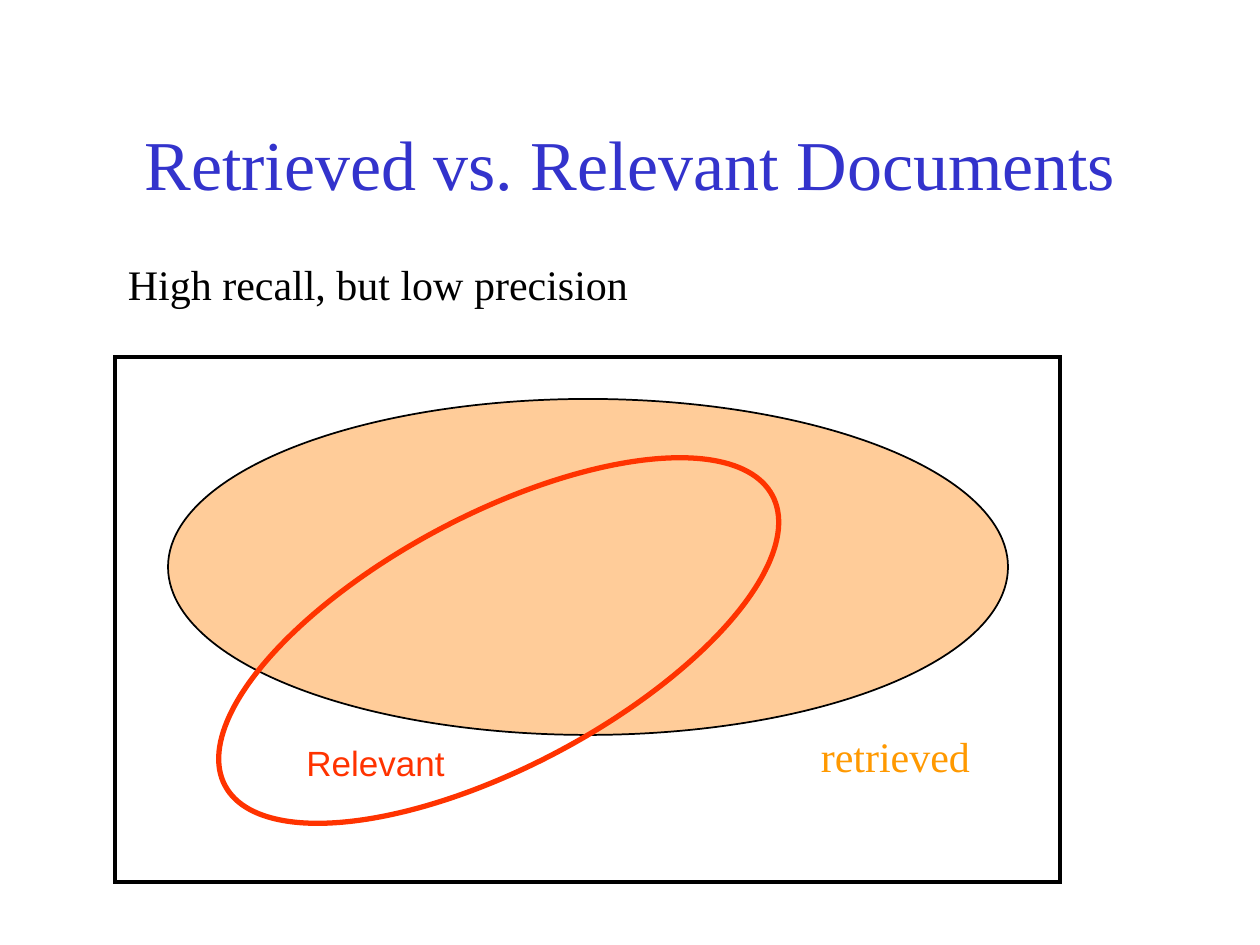
from dataclasses import dataclass

from lxml.etree import SubElement
from pptx import Presentation
from pptx.dml.color import RGBColor
from pptx.enum.shapes import MSO_SHAPE
from pptx.enum.text import MSO_ANCHOR, MSO_AUTO_SIZE, PP_ALIGN
from pptx.oxml.ns import qn
from pptx.util import Pt


@dataclass(frozen=True)
class Theme:
    serif: str = "Times New Roman"
    sans: str = "Arial"
    title: str = "3333CC"
    ink: str = "000000"
    relevant: str = "FF3300"
    retrieved: str = "FF9900"
    retrieved_fill: str = "FFCC99"
    title_size: int = 40
    body_size: int = 24
    label_size: int = 20


theme = Theme()

prs = Presentation()
prs.slide_width, prs.slide_height = Pt(720), Pt(540)
s = prs.slides.add_slide(prs.slide_layouts[6])


def add_text(text, box, size, color, font=theme.serif, wrap=False):
    sp = s.shapes.add_textbox(*map(Pt, box))
    tf = sp.text_frame
    tf.word_wrap = wrap
    tf.auto_size = MSO_AUTO_SIZE.NONE if wrap else MSO_AUTO_SIZE.SHAPE_TO_FIT_TEXT
    p = tf.paragraphs[0]
    r = p.add_run()
    r.text = text
    r.font.name = font
    r.font.size = Pt(size)
    r.font.color.rgb = RGBColor.from_string(color)
    return tf


def add_outline(kind, box, color, weight, fill=None, rotation=0):
    """Add a shape with a sharp-cornered outline, unfilled unless a fill is given."""
    sp = s.shapes.add_shape(kind, *map(Pt, box))
    sp.shadow.inherit = False
    sp.rotation = rotation
    sp.line.color.rgb = RGBColor.from_string(color)
    sp.line.width = Pt(weight)
    SubElement(sp.element.spPr.find(qn("a:ln")), qn("a:miter"), lim="800000")
    if fill:
        sp.fill.solid()
        sp.fill.fore_color.rgb = RGBColor.from_string(fill)
    else:
        sp.fill.background()


# Title
tf = add_text("Retrieved vs. Relevant Documents", (54, 48, 612, 90),
              theme.title_size, theme.title, wrap=True)
tf.vertical_anchor = MSO_ANCHOR.MIDDLE
tf.paragraphs[0].alignment = PP_ALIGN.CENTER

# Caption and Venn diagram inside the frame of all documents, back to front
add_text("Relevant", (168, 420, 93.6, 31), theme.label_size, theme.relevant, theme.sans)
add_outline(MSO_SHAPE.OVAL, (96, 228, 480, 192), theme.ink, 1, fill=theme.retrieved_fill)
add_text("High recall, but low precision", (66, 144, 302, 36), theme.body_size, theme.ink)
add_outline(MSO_SHAPE.RECTANGLE, (66, 204, 540, 300), theme.ink, 2.25)
add_outline(MSO_SHAPE.OVAL, (108, 294, 354, 144), theme.relevant, 3, rotation=332.1)
add_text("retrieved", (462, 414, 100, 36), theme.body_size, theme.retrieved)

prs.save("out.pptx")
